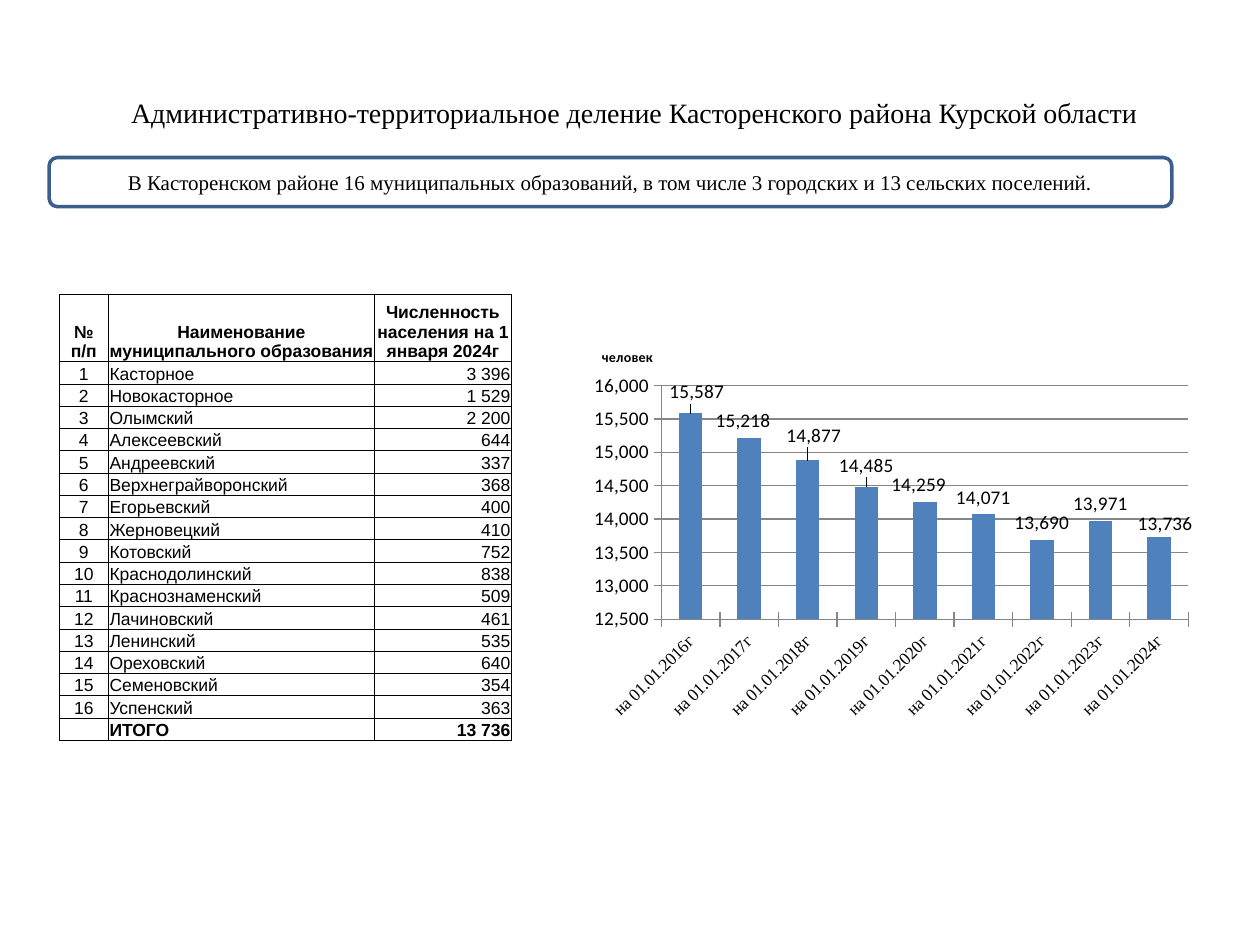
from lxml import etree
from pptx import Presentation
from pptx.chart import data as chart_data
from pptx.dml.color import RGBColor
from pptx.enum import chart as ch, shapes, text
from pptx.oxml import ns
from pptx.util import Inches, Pt

BLACK = RGBColor(0, 0, 0)
WHITE = RGBColor(255, 255, 255)
FRAME_BLUE = RGBColor(0x3A, 0x5F, 0x8C)
BAR_BLUE = RGBColor(0x4F, 0x81, 0xBD)
GRID_GRAY = RGBColor(0x86, 0x86, 0x86)
SERIF = "Times New Roman"


def style_font(font, **values):
    for key, value in {"bold": False, **values}.items():
        setattr(font, key, value)
    font.color.rgb = BLACK


def set_layout(parent, before, **values):
    """Give a chart part a manual layout, placed after the child named before."""
    for old in parent.findall(ns.qn("c:layout")):
        parent.remove(old)
    layout = etree.Element(ns.qn("c:layout"))
    manual = etree.SubElement(layout, ns.qn("c:manualLayout"))
    for tag, value in values.items():
        etree.SubElement(manual, ns.qn(f"c:{tag}"), val=str(value))
    if before:
        parent.find(ns.qn(before)).addnext(layout)
    else:
        parent.insert(0, layout)


prs = Presentation()
prs.slide_width, prs.slide_height = Inches(10), Inches(7.5)
slide = prs.slides.add_slide(prs.slide_layouts[5])

# Title
title = slide.shapes.title
title.left, title.top = Inches(0.23), Inches(0.78)
title.width, title.height = Inches(9.61), Inches(0.23)
title.text_frame.text = "Административно-территориальное деление Касторенского района Курской области"
title.text_frame.vertical_anchor = text.MSO_ANCHOR.MIDDLE
heading = title.text_frame.paragraphs[0]
heading.alignment = text.PP_ALIGN.CENTER
style_font(heading.runs[0].font, size=Pt(16), name=SERIF)

# Population table
settlements = [
    ("Касторное", "3 396"), ("Новокасторное", "1 529"), ("Олымский", "2 200"),
    ("Алексеевский", "644"), ("Андреевский", "337"), ("Верхнеграйворонский", "368"),
    ("Егорьевский", "400"), ("Жерновецкий", "410"), ("Котовский", "752"),
    ("Краснодолинский", "838"), ("Краснознаменский", "509"), ("Лачиновский", "461"),
    ("Ленинский", "535"), ("Ореховский", "640"), ("Семеновский", "354"),
    ("Успенский", "363"),
]
rows = [("№ п/п", "Наименование муниципального образования",
         "Численность населения на 1 января 2024г")]
rows += [(str(n), *entry) for n, entry in enumerate(settlements, 1)]
rows.append(("", "ИТОГО", "13 736"))
last = len(rows) - 1
table_height, header_height = Inches(3.54), Inches(0.53)

population = slide.shapes.add_table(
    len(rows), 3, Inches(0.47), Inches(2.34), Inches(3.59), table_height).table
population.first_row = population.horz_banding = False
for column, width in zip(population.columns, (0.39, 2.11, 1.09)):
    column.width = Inches(width)
for r, row in enumerate(population.rows):
    row.height = header_height if r == 0 else (table_height - header_height) // last

column_align = (text.PP_ALIGN.CENTER, text.PP_ALIGN.LEFT, text.PP_ALIGN.RIGHT)
cell_format = {
    "margin_left": Inches(0.01), "margin_right": Inches(0.01),
    "margin_top": Inches(0.01), "margin_bottom": 0,
    "vertical_anchor": text.MSO_ANCHOR.BOTTOM,
}
for r, values in enumerate(rows):
    for c, value in enumerate(values):
        cell = population.cell(r, c)
        for key, setting in cell_format.items():
            setattr(cell, key, setting)
        line = cell.text_frame.paragraphs[0]
        line.alignment = text.PP_ALIGN.CENTER if r == 0 else column_align[c]
        if value:
            run = line.add_run()
            run.text = value
            style_font(run.font, size=Pt(10), name="Arial", bold=r in (0, last))
        else:
            etree.SubElement(line._p, ns.qn("a:endParaRPr"), sz="1000")
        borders = cell._tc.get_or_add_tcPr()
        for side in ("lnL", "lnR", "lnT", "lnB"):
            border = etree.SubElement(borders, ns.qn(f"a:{side}"), w=str(Pt(0.5)))
            paint = etree.SubElement(border, ns.qn("a:solidFill"))
            etree.SubElement(paint, ns.qn("a:srgbClr"), val=str(BLACK))
        cell.fill.solid()
        cell.fill.fore_color.rgb = WHITE

# Framed summary
summary = slide.shapes.add_shape(
    shapes.MSO_SHAPE.ROUNDED_RECTANGLE,
    Inches(0.39), Inches(1.25), Inches(8.91), Inches(0.39))
summary.shadow.inherit = False
summary.fill.solid()
summary.fill.fore_color.rgb = WHITE
summary.line.color.rgb = FRAME_BLUE
summary.line.width = Pt(2)
summary.text_frame.word_wrap = True
summary.text_frame.vertical_anchor = text.MSO_ANCHOR.MIDDLE
sentence = summary.text_frame.paragraphs[0]
sentence.text = ("В Касторенском районе 16 муниципальных образований, "
                 "в том числе 3 городских и 13 сельских поселений.")
sentence.alignment = text.PP_ALIGN.CENTER
style_font(sentence.runs[0].font, size=Pt(12), name=SERIF)

# Population by year
by_year = chart_data.CategoryChartData(number_format="#,##0")
by_year.categories = [f"на 01.01.{year}г" for year in range(2016, 2025)]
by_year.add_series(
    "Series 1", (15587, 15218, 14877, 14485, 14259, 14071, 13690, 13971, 13736))
chart = slide.shapes.add_chart(
    ch.XL_CHART_TYPE.COLUMN_CLUSTERED,
    Inches(4.61), Inches(2.58), Inches(4.92), Inches(3.2), by_year).chart
style_font(chart.font, size=Pt(18), name="Calibri")
chart.has_legend = False

# Chart title and plot position
chart.has_title = True
unit = chart.chart_title.text_frame
unit.text = "человек"
style_font(unit.paragraphs[0].runs[0].font, size=Pt(8), name="Calibri", bold=True)
chart_root = chart._chartSpace.chart
set_layout(chart_root.find(ns.qn("c:title")), "c:tx",
           xMode="edge", yMode="edge", x=0.03, y=0.05)
set_layout(chart_root.plotArea, None, layoutTarget="inner", xMode="edge",
           yMode="edge", x=0.13, y=0.15, w=0.85, h=0.58)

# Axes
years, people = chart.category_axis, chart.value_axis
style_font(years.tick_labels.font, size=Pt(10), name=SERIF)
style_font(people.tick_labels.font, size=Pt(11), name="Calibri")
years._element.find(ns.qn("c:txPr")).find(ns.qn("a:bodyPr")).set("rot", "-2700000")
scale = {"minimum_scale": 12500, "maximum_scale": 16000, "major_unit": 500,
         "has_major_gridlines": True}
for key, value in scale.items():
    setattr(people, key, value)
people.tick_labels.number_format = "#,##0"
people.tick_labels.number_format_is_linked = False
for axis in (years, people):
    axis.major_tick_mark = ch.XL_TICK_MARK.CROSS
    axis.minor_tick_mark = ch.XL_TICK_MARK.NONE
for part in (years, people, people.major_gridlines):
    part.format.line.color.rgb = GRID_GRAY
    part.format.line.width = Pt(0.75)

# Bars and their labels
plot = chart.plots[0]
plot.gap_width = 150
plot.vary_by_categories = False
bars = plot.series[0]
bars.format.fill.solid()
bars.format.fill.fore_color.rgb = BAR_BLUE
bars.data_labels.show_value = True
bars.data_labels.number_format = "#,##0"
bars.data_labels.number_format_is_linked = False
bars.data_labels.position = ch.XL_LABEL_POSITION.OUTSIDE_END
style_font(bars.data_labels.font, size=Pt(11), name="Calibri")
label_shifts = {0: (0.01, -0.01), 1: (-0.01, 0), 2: (0.01, -0.02),
                3: (0, -0.01), 4: (-0.01, 0), 8: (0.01, 0.01)}
for index, (dx, dy) in label_shifts.items():
    label = bars.points[index].data_label
    style_font(label.font, size=Pt(11), name="Calibri")
    label.position = ch.XL_LABEL_POSITION.OUTSIDE_END
    node = bars.data_labels._element.xpath(f"c:dLbl[c:idx/@val='{index}']")[0]
    set_layout(node, "c:idx", x=dx, y=dy)

prs.save("out.pptx")
